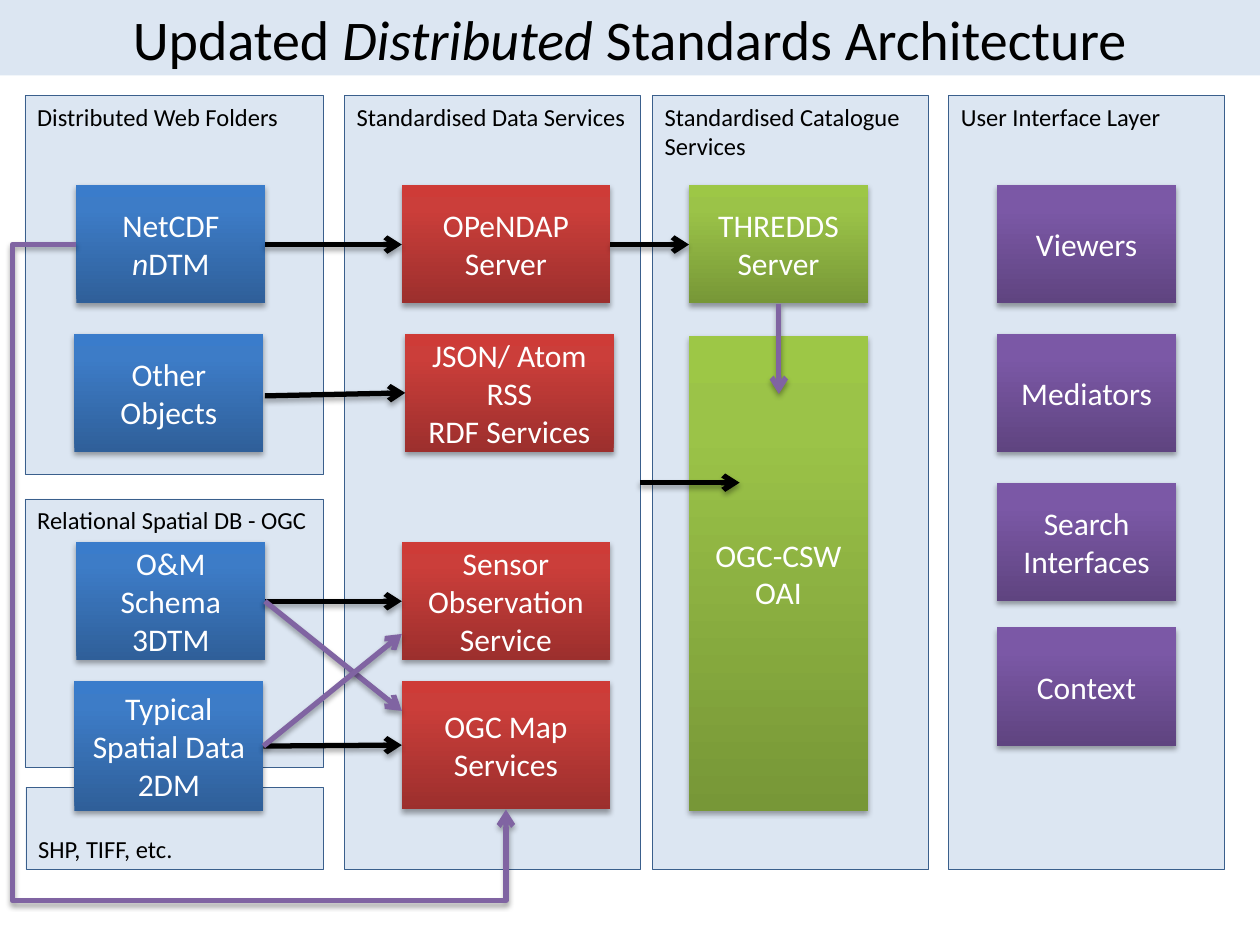
from copy import deepcopy
from dataclasses import dataclass

from lxml import etree
from pptx import Presentation
from pptx.dml.color import RGBColor
from pptx.enum.shapes import MSO_CONNECTOR, MSO_SHAPE
from pptx.enum.text import MSO_ANCHOR, PP_ALIGN
from pptx.oxml.ns import qn
from pptx.util import Cm, Pt

RECT = MSO_SHAPE.RECTANGLE
LINE, ELBOW = MSO_CONNECTOR.STRAIGHT, MSO_CONNECTOR.ELBOW
TOP, MID, LOW = MSO_ANCHOR.TOP, MSO_ANCHOR.MIDDLE, MSO_ANCHOR.BOTTOM
LEFT, MIDST = PP_ALIGN.LEFT, PP_ALIGN.CENTER
LEFT_SIDE, BASE_SIDE = 1, 2  # connection sites of a rectangle


@dataclass(frozen=True)
class Theme:
    font: str = "Calibri"
    title: int = 32
    label: int = 14
    body: int = 18
    black: str = "000000"
    white: str = "FFFFFF"
    pale: str = "DCE6F2"
    edge: str = "3A5F8C"
    violet: str = "8064A2"
    # Gradients run from the bottom up, with stops at 0, 80 and 100 %
    stops: tuple = (0, 0.8, 1)
    blue: tuple = ("2F5F99", "3D7CC7", "3A7CCB")
    red: tuple = ("9C2F2D", "CB3E3A", "CE3B37")
    green: tuple = ("779737", "9BC348", "9DC746")
    purple: tuple = ("5F4480", "7B58A6", "7C57A8")


THEME = Theme()
ROW = 2.39  # usual box height


def rgb(code):
    return RGBColor.from_string(code)


def write(shape, text, size, color, align, anchor):
    """Fill in the text; parts between asterisks are italic."""
    frame = shape.text_frame
    frame.word_wrap = True
    frame.vertical_anchor = anchor
    frame.text = text.replace("*", "")
    for para, line in zip(frame.paragraphs, text.split("\n")):
        para.alignment = align
        if "*" in line:
            para.text = ""
            for i, part in enumerate(line.split("*")):
                if part:
                    run = para.add_run()
                    run.text = part
                    run.font.italic = i % 2 == 1
        for run in para.runs:
            run.font.name = THEME.font
            run.font.size = Pt(size)
            run.font.color.rgb = rgb(color)


def shade(list_):
    """Put a soft drop shadow into an effect list."""
    drop = etree.SubElement(list_, qn("a:outerShdw"), blurRad="40000",
                            dist="23000", dir="5400000", rotWithShape="0")
    tint = etree.SubElement(drop, qn("a:srgbClr"), val=THEME.black)
    etree.SubElement(tint, qn("a:alpha"), val="35000")


def rect(slide, x, y, w, h):
    shape = slide.shapes.add_shape(RECT, Cm(x), Cm(y), Cm(w), Cm(h))
    shape.shadow.inherit = False
    shape.line.fill.background()
    return shape


def panel(slide, text, x, y, w, h, anchor=TOP):
    shape = rect(slide, x, y, w, h)
    shape.fill.solid()
    shape.fill.fore_color.rgb = rgb(THEME.pale)
    shape.line.color.rgb = rgb(THEME.edge)
    shape.line.width = Pt(0.25)
    write(shape, text, THEME.label, THEME.black, LEFT, anchor)


def banner(slide, text):
    shape = rect(slide, 0, 0, 25.4, 1.52)
    shape.fill.solid()
    shape.fill.fore_color.rgb = rgb(THEME.pale)
    write(shape, text, THEME.title, THEME.black, MIDST, MID)


def box(slide, text, tones, x, y, w, h=ROW):
    shape = rect(slide, x, y, w, h)
    shape.fill.gradient()
    shape.fill.gradient_angle = 90
    props = shape._element.spPr
    stops = props.find(".//" + qn("a:gsLst"))
    stops.append(deepcopy(stops[0]))
    for stop, place, tone in zip(shape.fill.gradient_stops, THEME.stops, tones):
        stop.position = place
        stop.color.rgb = rgb(tone)
    shade(props.find(qn("a:effectLst")))
    write(shape, text, THEME.body, THEME.white, MIDST, MID)
    return shape


def style(link, color):
    """Give a connector its line, arrowhead and shadow."""
    link.line.color.rgb = rgb(color)
    link.line.width = Pt(3)
    props = link._element.spPr
    etree.SubElement(props.find(qn("a:ln")), qn("a:tailEnd"), type="arrow")
    shade(etree.SubElement(props, qn("a:effectLst")))


def arrow(slide, color, x1, y1, x2, y2):
    link = slide.shapes.add_connector(LINE, Cm(x1), Cm(y1), Cm(x2), Cm(y2))
    style(link, color)


def detour(slide, color, start, end, x, y):
    """Lead from the left of start, by way of x and y, to the base of end."""
    link = slide.shapes.add_connector(ELBOW, 0, 0, 0, 0)
    link.begin_connect(start, LEFT_SIDE)
    link.end_connect(end, BASE_SIDE)
    shape = link._element.spPr.find(qn("a:prstGeom"))
    shape.set("prst", "bentConnector4")
    bends = shape.find(qn("a:avLst"))
    if bends is None:
        bends = etree.SubElement(shape, qn("a:avLst"))
    turns = ((Cm(x) - link.left) / link.width, (Cm(y) - link.top) / link.height)
    for i, turn in enumerate(turns, 1):
        etree.SubElement(bends, qn("a:gd"), name=f"adj{i}",
                         fmla=f"val {round(turn * 100000)}")
    style(link, color)


def main():
    deck = Presentation()
    deck.slide_width, deck.slide_height = Cm(25.4), Cm(19.05)
    slide = deck.slides.add_slide(deck.slide_layouts[6])

    # Title and layer panels
    banner(slide, "Updated *Distributed* Standards Architecture")
    for item in (
        ("Standardised Catalogue Services", 13.15, 1.93, 5.56, 15.6),
        ("Distributed Web Folders", 0.5, 1.93, 6.02, 7.64),
        ("Standardised Data Services", 6.94, 1.93, 5.97, 15.6),
        ("SHP, TIFF, etc.", 0.52, 15.87, 6, 1.66, LOW),
        ("Relational Spatial DB - OGC", 0.5, 10.06, 6.02, 5.41),
        ("User Interface Layer", 19.12, 1.93, 5.56, 15.6),
    ):
        panel(slide, *item)

    # Data stores
    store = box(slide, "NetCDF\n*n*DTM", THEME.blue, 1.54, 3.73, 3.81)
    box(slide, "Other Objects", THEME.blue, 1.5, 6.73, 3.81)
    box(slide, "O&M Schema\n3DTM", THEME.blue, 1.54, 10.92, 3.81)
    box(slide, "Typical Spatial Data\n2DM", THEME.blue, 1.5, 13.72, 3.81, 2.63)

    # Data services
    box(slide, "OPeNDAP\nServer", THEME.red, 8.1, 3.73, 4.2)
    box(slide, "JSON/ Atom\nRSS\nRDF Services", THEME.red, 8.17, 6.73, 4.2)
    box(slide, "Sensor Observation Service", THEME.red, 8.1, 10.92, 4.2)
    maps = box(slide, "OGC Map Services", THEME.red, 8.1, 13.72, 4.2, 2.6)

    # Catalogue services
    box(slide, "THREDDS\nServer", THEME.green, 13.89, 3.73, 3.61)
    box(slide, "OGC-CSW\nOAI", THEME.green, 13.89, 6.77, 3.61, 9.58)

    # User interface
    for text, y in (("Viewers", 3.73), ("Mediators", 6.73),
                    ("Search Interfaces", 9.73), ("Context", 12.65)):
        box(slide, text, THEME.purple, 20.1, y, 3.61)

    # Flows
    detour(slide, THEME.violet, store, maps, 0.25, 18.16)
    for ends in (
        (5.34, 4.93, 8.1, 4.93),
        (5.34, 7.98, 8.17, 7.92),
        (12.3, 4.93, 13.89, 4.93),
        (12.9, 9.73, 14.91, 9.73),
        (5.34, 12.12, 8.1, 12.12),
        (5.31, 15.04, 8.1, 15.02),
    ):
        arrow(slide, THEME.black, *ends)
    for ends in (
        (15.7, 6.12, 15.7, 7.94),
        (5.34, 12.12, 8.1, 14.33),
        (5.31, 15.04, 8.1, 12.78),
    ):
        arrow(slide, THEME.violet, *ends)

    deck.save("out.pptx")


if __name__ == "__main__":
    main()
